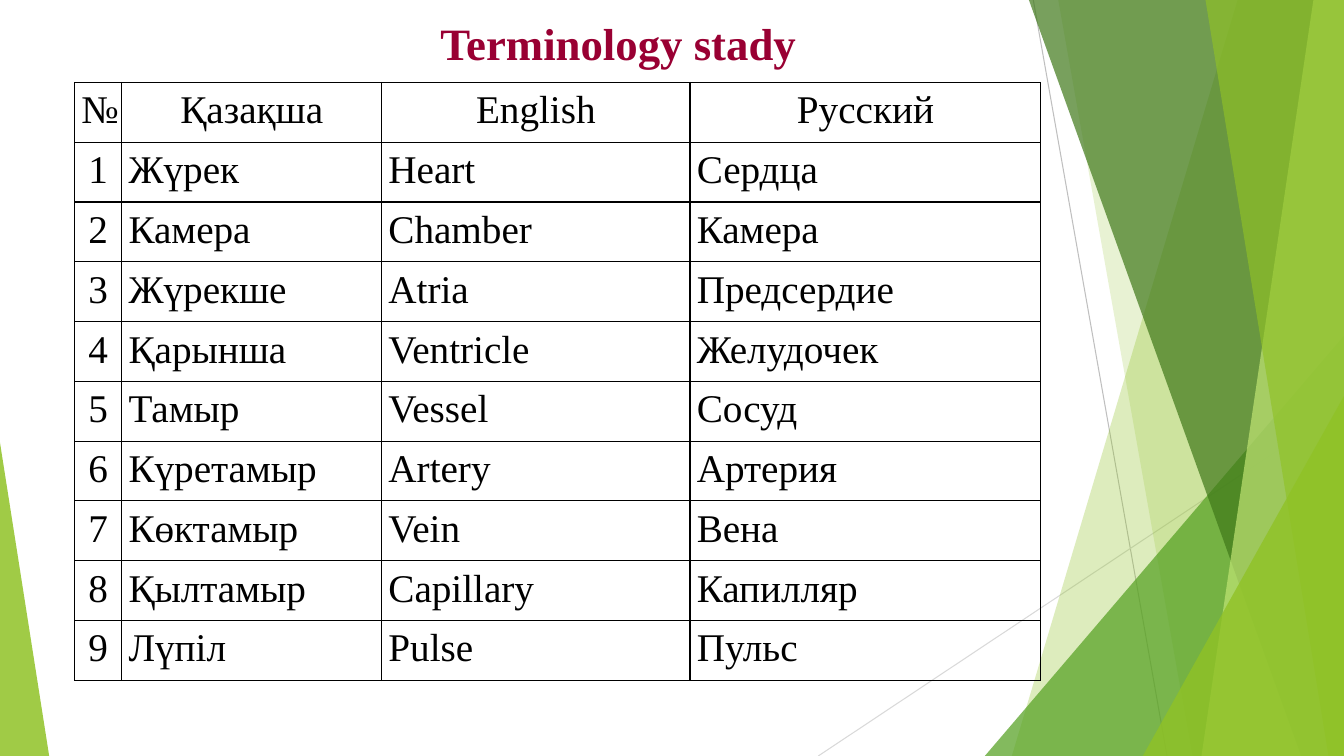
from lxml.etree import SubElement
from pptx import Presentation
from pptx.dml.color import RGBColor
from pptx.enum.shapes import MSO_CONNECTOR, MSO_SHAPE
from pptx.enum.text import MSO_ANCHOR, MSO_AUTO_SIZE, PP_ALIGN
from pptx.oxml.ns import qn
from pptx.util import Cm, Pt

WIDTH, HEIGHT = 33.87, 19.05
FONT = "Times New Roman"
BLACK = RGBColor(0x00, 0x00, 0x00)
CRIMSON = RGBColor(0x99, 0x00, 0x33)
LIME = RGBColor(0x90, 0xC2, 0x26)
PALE_LIME = RGBColor(0xC0, 0xE4, 0x74)
GREEN = RGBColor(0x54, 0xA0, 0x21)
DARK_GREEN = RGBColor(0x3F, 0x78, 0x19)
GRAY = RGBColor(0xBF, 0xBF, 0xBF)
LIGHT_GRAY = RGBColor(0xD9, 0xD9, 0xD9)

# x1, y1, x2, y2, colour
RAYS = [
    (26.04, 0, 29.41, HEIGHT, GRAY),
    (WIDTH, 10.24, 20.62, HEIGHT, LIGHT_GRAY),
]
# Bands reach the right edge: x at the top, x at the bottom, colour, opacity %
BACK_BANDS = [(31.19, 25.5, LIME, 30), (26.67, 30.05, LIME, 20)]
FRONT_BANDS = [
    (25.93, 32.79, DARK_GREEN, 70),
    (33.1, 30.28, PALE_LIME, 70),
    (30.38, 33.48, LIME, 65),
]
# Corners stand on the bottom edge: left, top, width, apex position, colour, opacity %
BACK_CORNER = (24.82, 8.46, 9.05, 1, GREEN, 72)
FRONT_CORNERS = [(28.8, 9.98, 5.07, 1, LIME, 80), (0, 11.15, 1.24, 0, LIME, 85)]

COLUMN_WIDTHS = [1.19, 6.55, 7.77, 8.84]
HEADINGS = ["№", "Қазақша", "English", "Русский"]
TERMS = [
    ("Жүрек", "Heart", "Сердца"),
    ("Камера", "Chamber", "Камера"),
    ("Жүрекше", "Atria", "Предсердие"),
    ("Қарынша", "Ventricle", "Желудочек"),
    ("Тамыр", "Vessel", "Сосуд"),
    ("Күретамыр", "Artery", "Артерия"),
    ("Көктамыр", "Vein", "Вена"),
    ("Қылтамыр", "Capillary", "Капилляр"),
    ("Лүпіл", "Pulse", "Пульс"),
]


def set_all(target, formats):
    for attribute, value in formats.items():
        setattr(target, attribute, value)


def paint(facet, color, opacity):
    facet.shadow.inherit = False
    facet.line.fill.background()
    facet.fill.solid()
    facet.fill.fore_color.rgb = color
    color_node = facet._element.spPr.find(".//" + qn("a:srgbClr"))
    SubElement(color_node, qn("a:alpha"), val=str(opacity * 1000))


def add_ray(shapes, left, top, x1, y1, x2, y2, color):
    ray = shapes.add_connector(MSO_CONNECTOR.STRAIGHT, Cm(left + x1), Cm(top + y1),
                               Cm(left + x2), Cm(top + y2))
    set_all(ray.line, {"width": Pt(0.75)})
    ray.line.color.rgb = color
    SubElement(ray._element.spPr, qn("a:effectLst"))


def add_band(shapes, box, top_x, bottom_x, color, opacity):
    left, top, width, height = box
    right, bottom = Cm(left + width), Cm(top + height)
    outline = shapes.build_freeform(Cm(left + top_x), Cm(top))
    outline.add_line_segments([(right, Cm(top)), (right, bottom),
                               (Cm(left + bottom_x), bottom)])
    paint(outline.convert_to_shape(), color, opacity)


def add_corner(shapes, box, x, y, corner_width, apex, color, opacity):
    left, top, _, height = box
    corner = shapes.add_shape(MSO_SHAPE.ISOSCELES_TRIANGLE, Cm(left + x), Cm(top + y),
                              Cm(corner_width), Cm(height - y))
    corner.adjustments[0] = apex
    paint(corner, color, opacity)


def add_backdrop(shapes, box):
    """Layer the thin rays and translucent facets from back to front."""
    for ray in RAYS:
        add_ray(shapes, *box[:2], *ray)
    for band in BACK_BANDS:
        add_band(shapes, box, *band)
    add_corner(shapes, box, *BACK_CORNER)
    for band in FRONT_BANDS:
        add_band(shapes, box, *band)
    for corner in FRONT_CORNERS:
        add_corner(shapes, box, *corner)


def add_title(shapes, box, wording):
    title = shapes.add_textbox(*map(Cm, box))
    set_all(title.text_frame, {"word_wrap": False,
                               "auto_size": MSO_AUTO_SIZE.SHAPE_TO_FIT_TEXT})
    run = title.text_frame.paragraphs[0].add_run()
    run.text = wording
    set_all(run.font, {"name": FONT, "size": Pt(32), "bold": True})
    run.font.color.rgb = CRIMSON


def add_borders(cell):
    for side in ("a:lnL", "a:lnR", "a:lnT", "a:lnB"):
        border = SubElement(cell._tc.get_or_add_tcPr(), qn(side), w=str(Pt(1)))
        fill = SubElement(border, qn("a:solidFill"))
        SubElement(fill, qn("a:srgbClr"), val=str(BLACK))


def fill_cell(cell, wording, centered):
    add_borders(cell)
    cell.fill.background()
    set_all(cell, {"margin_left": Cm(0.17), "margin_right": Cm(0.17), "margin_top": 0,
                   "margin_bottom": 0, "vertical_anchor": MSO_ANCHOR.TOP})
    paragraph = cell.text_frame.paragraphs[0]
    set_all(paragraph, {"line_spacing": 1.15,
                        "alignment": PP_ALIGN.CENTER if centered else PP_ALIGN.LEFT})
    run = paragraph.add_run()
    run.text = wording
    set_all(run.font, {"name": FONT, "size": Pt(28)})
    run.font.color.rgb = BLACK


def add_glossary(shapes, box):
    rows = [HEADINGS] + [(str(number), *term) for number, term in enumerate(TERMS, 1)]
    glossary = shapes.add_table(len(rows), len(HEADINGS), *map(Cm, box)).table
    set_all(glossary, {"first_row": False, "horz_banding": False})
    for column, width in zip(glossary.columns, COLUMN_WIDTHS):
        column.width = Cm(width)
    for r, row in enumerate(rows):
        glossary.rows[r].height = Cm(box[3] / len(rows))
        for c, wording in enumerate(row):
            fill_cell(glossary.cell(r, c), wording, centered=r == 0 or c == 0)


def main():
    deck = Presentation()
    set_all(deck, {"slide_width": Cm(WIDTH), "slide_height": Cm(HEIGHT)})
    shapes = deck.slides.add_slide(deck.slide_layouts[6]).shapes
    add_backdrop(shapes, (0, 0, WIDTH, HEIGHT))
    add_title(shapes, (10.85, 0.28, 9.55, 1.63), "Terminology stady")
    add_glossary(shapes, (1.88, 2.08, sum(COLUMN_WIDTHS), 15.06))
    deck.save("out.pptx")


if __name__ == "__main__":
    main()
